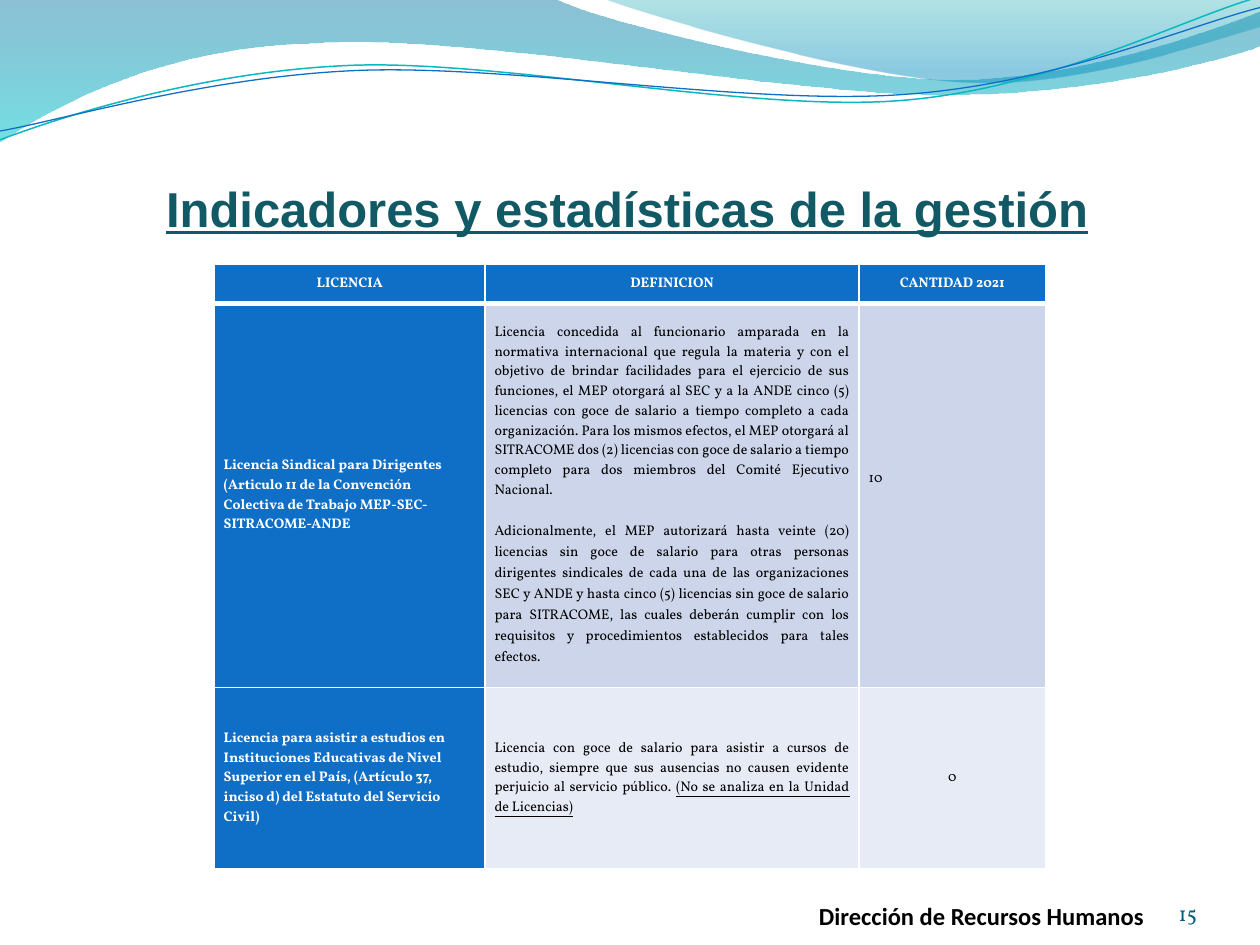
from pptx import Presentation
from pptx.util import Cm, Pt
from pptx.dml.color import RGBColor
from pptx.enum.text import MSO_ANCHOR, PP_ALIGN
from lxml.etree import SubElement
from pptx.oxml.ns import qn

LEFT, MID, RIGHT, FULL = PP_ALIGN.LEFT, PP_ALIGN.CENTER, PP_ALIGN.RIGHT, PP_ALIGN.JUSTIFY
TOP, CENTER, BOTTOM = MSO_ANCHOR.TOP, MSO_ANCHOR.MIDDLE, MSO_ANCHOR.BOTTOM
WHITE = RGBColor(0xFF, 0xFF, 0xFF)
BLACK = RGBColor(0, 0, 0)
BLUE = RGBColor(0x0F, 0x6F, 0xC6)
AQUA = RGBColor(0x0A, 0xB8, 0xBF)
TEAL = RGBColor(0x11, 0x59, 0x64)
NAVY = RGBColor(0x04, 0x5D, 0x75)
DARK = RGBColor(0xCC, 0xD5, 0xEA)
LIGHT = RGBColor(0xE7, 0xEB, 0xF5)

deck = Presentation()
deck.slide_width, deck.slide_height = Cm(25.4), Cm(19.05)
slide = deck.slides.add_slide(deck.slide_layouts[6])


def trace(path, close):
    """Outline from a start, line ends (2 numbers) and Bézier parts (6), in inches."""
    spots = [(Cm(part[i] * 2.54), Cm(part[i + 1] * 2.54))
             for part in path for i in range(0, len(part), 2)]
    pen = slide.shapes.build_freeform(*spots[0])
    pen.add_line_segments(spots[1:], close=close)
    shape = pen.convert_to_shape()
    shape.shadow.inherit = False
    # Join the three points of each Bézier part into one curve
    lines = iter(list(shape.element.spPr.iter(qn("a:lnTo"))))
    for part in path[1:]:
        first = next(lines)
        if len(part) == 6:
            first.tag = qn("a:cubicBezTo")
            for _ in range(2):
                line = next(lines)
                first.append(line[0])
                line.getparent().remove(line)
    return shape


def style(par, size, font, color, bold, align):
    par.alignment = align
    for run in par.runs:
        run.font.size, run.font.name, run.font.bold = Pt(size), font, bold
        run.font.color.rgb = color


# Translucent waves: outline, then stops of place, colour and opacity
waves = [
    ([(0, 0), (4.4, -0.01), (4.76, 0.17, 6.64, 0.63, 7.58, 0.63),
      (8.53, 0.63, 9.58, 0.26, 10, 0.09), (10.01, 0.36),
      (9.83, 0.44, 8.7, 0.76, 7.46, 0.75), (6.22, 0.75, 3.82, 0.28, 2.57, 0.34),
      (1.29, 0.36, 0.46, 0.83, -0.01, 1.13), (0, 0)],
     [(0, RGBColor(0, 0x74, 0xA1), 45), (1, RGBColor(0, 0xC6, 0xCF), 55)]),
    ([(4.79, -0.01), (5.09, 0.11, 6.82, 0.62, 7.69, 0.65),
      (8.56, 0.69, 9.61, 0.32, 10, 0.21), (10, 0), (4.79, -0.01)],
     [(0, RGBColor(0, 0xA1, 0xA9), 30), (0.8, RGBColor(0, 0x8B, 0xBF), 45)]),
]
for path, stops in waves:
    wave = trace(path, True)
    wave.line.fill.background()
    wave.fill.gradient()
    wave.fill.gradient_angle = 270
    for stop, (place, color, _) in zip(wave.fill.gradient_stops, stops):
        stop.position = place
        stop.color.rgb = color
    for node, (_, _, alpha) in zip(wave.element.spPr.iter(qn("a:srgbClr")), stops):
        SubElement(node, qn("a:alpha"), val=str(alpha * 1000))

# Thin curves
curves = [
    ([(0, 1.11), (0.48, 0.93, 1.58, 0.57, 2.77, 0.52),
      (3.95, 0.47, 5.93, 0.89, 7.13, 0.8), (8.33, 0.71, 9.38, 0.15, 9.98, -0.02)], AQUA, 0.85),
    ([(0, 1.04), (0.47, 0.96, 1.64, 0.61, 2.83, 0.56),
      (4.03, 0.51, 5.97, 0.84, 7.17, 0.75), (8.36, 0.67, 9.41, 0.21, 10, 0.06)], BLUE, 0.75),
]
for path, color, width in curves:
    curve = trace(path, False)
    curve.fill.background()
    curve.line.color.rgb = color
    curve.line.width = Pt(width)

# Footer, page number and title
labels = [
    ("Dirección de Recursos Humanos", (16.51, 17.73, 7.59, 1.02), (0, 0.13, 0, 0),
     BOTTOM, 14, "Calibri", BLACK, True, LEFT),
    ("15", (22.02, 17.65, 2.11, 1.02), (0, 0, 0, 0),
     BOTTOM, 12, "Vollkorn", NAVY, False, RIGHT),
    ("Indicadores y estadísticas de la gestión", (3.1, 3.47, 19.2, 1.45),
     (0.25, 0.13, 0.25, 0.13), TOP, 28, "Arial", TEAL, True, LEFT),
]
for text, place, pad, anchor, size, font, color, bold, align in labels:
    frame = slide.shapes.add_textbox(*[Cm(v) for v in place]).text_frame
    frame.word_wrap = True
    frame.vertical_anchor = anchor
    (frame.margin_left, frame.margin_top,
     frame.margin_right, frame.margin_bottom) = [Cm(v) for v in pad]
    frame.text = text
    style(frame.paragraphs[0], size, font, color, bold, align)
frame.paragraphs[0].runs[0].font.underline = True

# Table of licences
rows = [
    ["LICENCIA", "DEFINICION", "CANTIDAD 2021"],
    ["Licencia Sindical para Dirigentes\n"
     "(Articulo 11 de la Convención Colectiva de Trabajo MEP-SEC-SITRACOME-ANDE",
     "Licencia concedida al funcionario amparada en la normativa internacional que regula "
     "la materia y con el objetivo de brindar facilidades para el ejercicio de sus "
     "funciones, el MEP otorgará al SEC y a la ANDE cinco (5) licencias con goce de salario "
     "a tiempo completo a cada organización. Para los mismos efectos, el MEP otorgará al "
     "SITRACOME dos (2) licencias con goce de salario a tiempo completo para dos miembros "
     "del Comité Ejecutivo Nacional.\n"
     "Adicionalmente, el MEP autorizará hasta veinte (20) licencias sin goce de salario para "
     "otras personas dirigentes sindicales de cada una de las organizaciones SEC y ANDE y "
     "hasta cinco (5) licencias sin goce de salario para SITRACOME, las cuales deberán "
     "cumplir con los requisitos y procedimientos establecidos para tales efectos.",
     "10"],
    ["Licencia para asistir a estudios en Instituciones Educativas de Nivel Superior en el "
     "País, (Artículo 37, inciso d) del Estatuto del Servicio Civil)",
     "Licencia con goce de salario para asistir a cursos de estudio, siempre que sus "
     "ausencias no causen evidente perjuicio al servicio público. ",
     "0"],
]
aligns = [[MID, MID, MID], [LEFT, FULL, LEFT], [LEFT, FULL, MID]]
table = slide.shapes.add_table(3, 3, Cm(4.32), Cm(5.33), Cm(16.76), Cm(12.19)).table
for col, width in zip(table.columns, (5.46, 7.54, 3.76)):
    col.width = Cm(width)
for row, height in zip(table.rows, (0.79, 7.74, 3.66)):
    row.height = Cm(height)

for r, texts in enumerate(rows):
    for c, text in enumerate(texts):
        cell = table.cell(r, c)
        head = r == 0 or c == 0
        cell.text_frame.text = text
        cell.vertical_anchor = CENTER
        cell.margin_left = Cm(0.19)
        cell.margin_right = Cm(0.25 if c == 0 and r else 0.19)
        cell.margin_top = cell.margin_bottom = 0
        props = cell._tc.get_or_add_tcPr()
        for side in "LRTB":
            thick = (r, side) in ((0, "B"), (1, "T"))
            edge = SubElement(props, qn("a:ln" + side), w=str(Pt(3 if thick else 1)))
            paint = SubElement(edge, qn("a:solidFill"))
            SubElement(paint, qn("a:srgbClr"), val=str(WHITE))
        cell.fill.solid()
        cell.fill.fore_color.rgb = BLUE if head else DARK if r == 1 else LIGHT
        if (r, c) == (2, 1):
            note = cell.text_frame.paragraphs[0].add_run()
            note.text = "(No se analiza en la Unidad de Licencias)"
            note.font.underline = True
        for par in cell.text_frame.paragraphs:
            style(par, 8, "Vollkorn", WHITE if head else BLACK, head, aligns[r][c])

# Gap between the two definitions, and the raised count
extra = table.cell(1, 1).text_frame.paragraphs[1]
extra.space_before = Pt(11.3)
extra.line_spacing = 1.07
table.cell(1, 2).margin_bottom = Cm(0.66)

deck.save("out.pptx")
